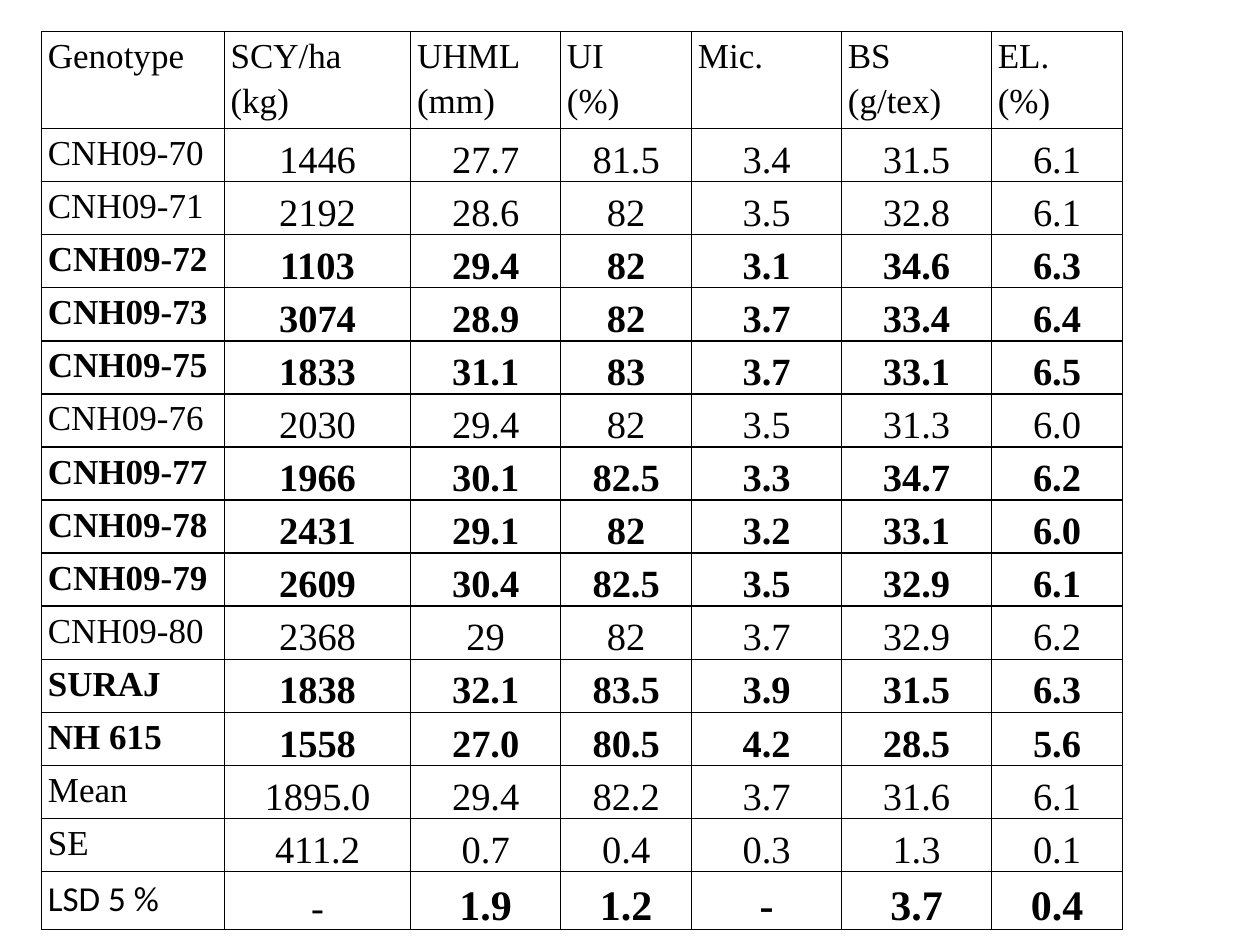
from dataclasses import dataclass

from lxml.etree import SubElement
from pptx import Presentation
from pptx.dml.color import RGBColor
from pptx.enum.text import MSO_ANCHOR, PP_ALIGN
from pptx.oxml.ns import qn
from pptx.table import _Cell
from pptx.util import Inches, Pt

COLORS = {"ink": "000000"}
SERIF, SANS = "Times New Roman", "Calibri"
WIDTHS = [1.45, 1.48, 1.19, 1.04, 1.19, 1.19, 1.04]
HEADS = ["Genotype", "SCY/ha\n(kg)", "UHML\n(mm)", "UI\n(%)", "Mic.", "BS\n(g/tex)", "EL.\n(%)"]
TOP, BODY, LAST = Inches(0.77), Inches(5.9), Inches(0.46)


@dataclass
class Line:
    name: str
    data: str
    bold: bool = False
    font: str = SERIF
    size: int = 22


LINES = [
    Line("CNH09-70", "1446 27.7 81.5 3.4 31.5 6.1"),
    Line("CNH09-71", "2192 28.6 82 3.5 32.8 6.1"),
    Line("CNH09-72", "1103 29.4 82 3.1 34.6 6.3", bold=True),
    Line("CNH09-73", "3074 28.9 82 3.7 33.4 6.4", bold=True),
    Line("CNH09-75", "1833 31.1 83 3.7 33.1 6.5", bold=True),
    Line("CNH09-76", "2030 29.4 82 3.5 31.3 6.0"),
    Line("CNH09-77", "1966 30.1 82.5 3.3 34.7 6.2", bold=True),
    Line("CNH09-78", "2431 29.1 82 3.2 33.1 6.0", bold=True),
    Line("CNH09-79", "2609 30.4 82.5 3.5 32.9 6.1", bold=True),
    Line("CNH09-80", "2368 29 82 3.7 32.9 6.2"),
    Line("SURAJ", "1838 32.1 83.5 3.9 31.5 6.3", bold=True),
    Line("NH 615", "1558 27.0 80.5 4.2 28.5 5.6", bold=True),
    Line("Mean", "1895.0 29.4 82.2 3.7 31.6 6.1"),
    Line("SE", "411.2 0.7 0.4 0.3 1.3 0.1"),
    Line("LSD 5 %", "- 1.9 1.2 - 3.7 0.4", font=SANS, size=24),
]


def write(cell: _Cell, text: str, *, size: int = 20, bold: bool = False,
          font: str = SERIF, mid: bool = False) -> None:
    """Fill a cell with text, one paragraph for each line."""
    cell.text = text
    cell.vertical_anchor = MSO_ANCHOR.BOTTOM if mid else MSO_ANCHOR.TOP
    for para in cell.text_frame.paragraphs:
        para.alignment = PP_ALIGN.CENTER if mid else PP_ALIGN.LEFT
        para.line_spacing = 1.15
        for run in para.runs:
            run.font.size = Pt(size)
            run.font.bold = bold
            run.font.name = font
            run.font.color.rgb = RGBColor.from_string(COLORS["ink"])


def frame(cell: _Cell) -> None:
    """Set the margins, borders and clear fill of a cell."""
    cell.margin_left = cell.margin_right = Inches(0.05)
    cell.margin_top = cell.margin_bottom = 0
    props = cell._tc.get_or_add_tcPr()
    for side in ("a:lnL", "a:lnR", "a:lnT", "a:lnB"):
        edge = SubElement(props, qn(side), w=str(Pt(1)))
        fill = SubElement(edge, qn("a:solidFill"))
        SubElement(fill, qn("a:srgbClr"), val=COLORS["ink"])
    cell.fill.background()


def main() -> None:
    """Build the slide with the genotype table."""
    deck = Presentation()
    deck.slide_width, deck.slide_height = Inches(10), Inches(7.5)
    slide = deck.slides.add_slide(deck.slide_layouts[6])
    shape = slide.shapes.add_table(len(LINES) + 1, len(HEADS), Inches(0.33),
                                   Inches(0.25), Inches(8.58), TOP + BODY + LAST)
    table = shape.table
    table.first_row = table.horz_banding = False
    for col, width in zip(table.columns, WIDTHS):
        col.width = Inches(width)
    count = len(LINES) - 1
    for row, height in zip(table.rows, [TOP] + [BODY // count] * count + [LAST]):
        row.height = height

    for col, head in enumerate(HEADS):
        write(table.cell(0, col), head)
    for row, line in enumerate(LINES, 1):
        write(table.cell(row, 0), line.name, bold=line.bold, font=line.font)
        for col, value in enumerate(line.data.split(), 1):
            last = line.size == 24 and col > 1
            write(table.cell(row, col), value, size=line.size if last else 22,
                  bold=line.bold or last, mid=True)
    for cell in table.iter_cells():
        frame(cell)
    deck.save("out.pptx")


if __name__ == "__main__":
    main()
